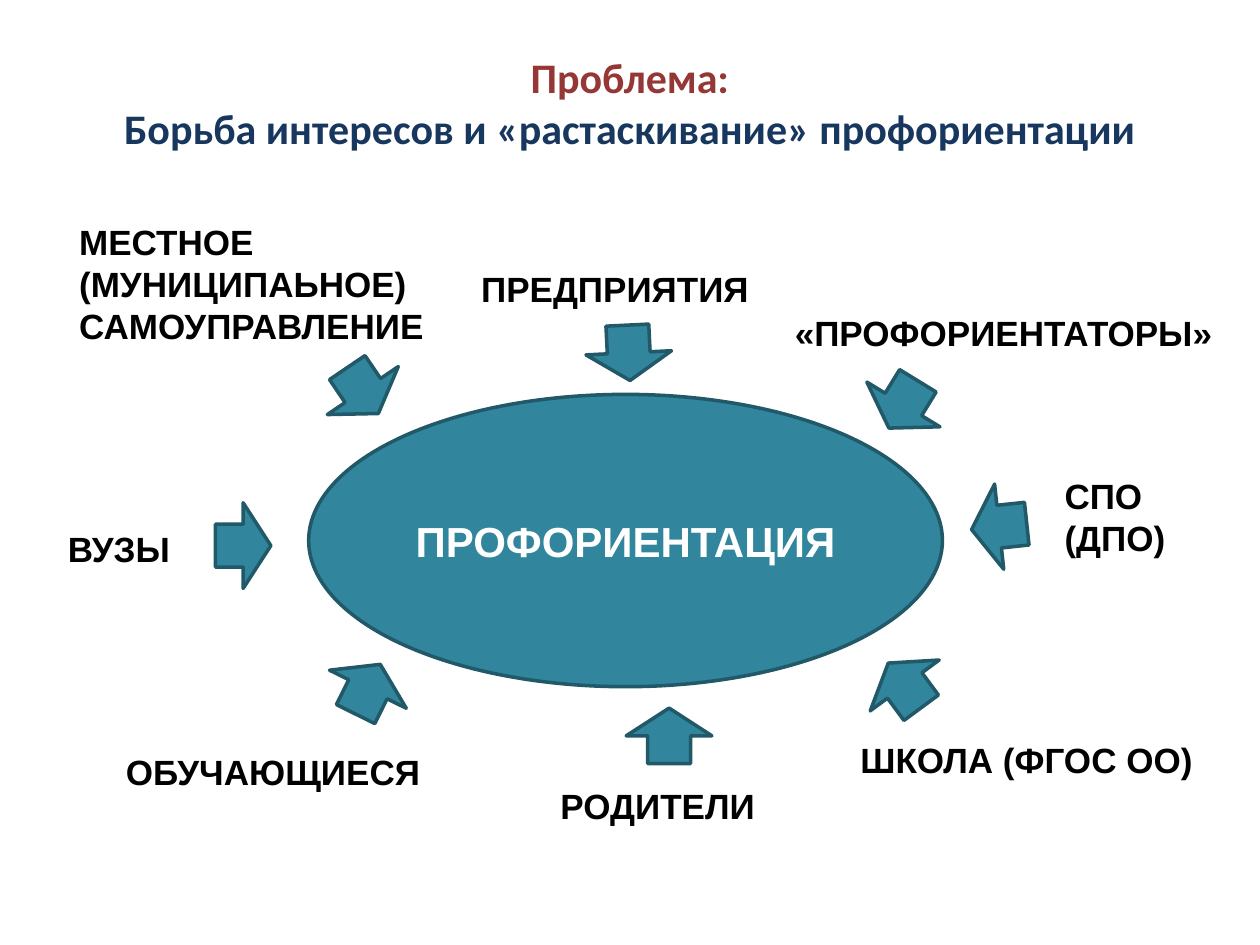
from typing import NamedTuple

from pptx import Presentation
from pptx.dml.color import RGBColor
from pptx.enum.shapes import MSO_SHAPE as Shape
from pptx.enum.text import MSO_ANCHOR as Anchor, PP_ALIGN as Align
from pptx.util import Inches, Pt

COLORS = {
    "problem": "953735",
    "statement": "17375E",
    "fill": "31859C",
    "outline": "215968",
    "label": "000000",
    "center": "FFFFFF",
}
ARROW_WIDTH, ARROW_HEIGHT = 0.68, 0.44


class Box(NamedTuple):
    left: float
    top: float
    width: float
    height: float


class Stakeholder(NamedTuple):
    """A party with its label and the arrow pointing to the centre."""
    name: str
    label: Box
    arrow_left: float
    arrow_top: float
    arrow_rotation: float


STAKEHOLDERS = [
    Stakeholder("МЕСТНОЕ (МУНИЦИПАЬНОЕ) САМОУПРАВЛЕНИЕ",
                Box(0.53, 1.7, 3.06, 1.01), 2.54, 2.88, 325.9),
    Stakeholder("ПРЕДПРИЯТИЯ", Box(3.72, 2.07, 2.34, 0.4), 4.65, 2.58, 357.2),
    Stakeholder("«ПРОФОРИЕНТАТОРЫ»", Box(6.21, 2.42, 3.59, 0.4), 6.83, 2.99, 31.5),
    Stakeholder("СПО\n(ДПО)", Box(8.35, 3.72, 1.15, 0.77), 7.59, 3.96, 83.9),
    Stakeholder("ШКОЛА (ФГОС ОО)", Box(6.73, 5.81, 2.88, 0.44), 6.84, 5.22, 143.6),
    Stakeholder("РОДИТЕЛИ", Box(4.35, 6.18, 1.83, 0.4), 4.97, 5.62, 180),
    Stakeholder("ОБУЧАЮЩИЕСЯ", Box(0.9, 5.91, 2.55, 0.4), 2.58, 5.25, 206.4),
    Stakeholder("ВУЗЫ", Box(0.44, 4.14, 1.51, 0.4), 1.59, 4.11, 270),
]


def style_run(run, size: int, color: str, font: str = "Arial") -> None:
    run.font.name = font
    run.font.size = Pt(size)
    run.font.bold = True
    run.font.color.rgb = RGBColor.from_string(COLORS[color])


def add_text(slide, box: Box, text: str):
    frame = slide.shapes.add_textbox(*map(Inches, box)).text_frame
    frame.word_wrap = True
    frame.text = text
    return frame


def add_title(slide) -> None:
    frame = add_text(slide, Box(0.5, 0.45, 9, 0.72),
                     "Проблема:\vБорьба интересов и «растаскивание» профориентации")
    frame.vertical_anchor = Anchor.MIDDLE
    heading = frame.paragraphs[0]
    heading.alignment = Align.CENTER
    for run, color in zip(heading.runs, ("problem", "statement")):
        style_run(run, 24, color, "Calibri")


def add_teal_shape(slide, kind: Shape, box: Box, rotation: float = 0):
    shape = slide.shapes.add_shape(kind, *map(Inches, box))
    shape.rotation = rotation
    shape.shadow.inherit = False
    shape.fill.solid()
    shape.fill.fore_color.rgb = RGBColor.from_string(COLORS["fill"])
    shape.line.color.rgb = RGBColor.from_string(COLORS["outline"])
    shape.line.width = Pt(2)
    return shape


def add_center(slide) -> None:
    ellipse = add_teal_shape(slide, Shape.OVAL, Box(2.45, 3.13, 5.03, 2.32))
    frame = ellipse.text_frame
    frame.word_wrap = False
    frame.vertical_anchor = Anchor.MIDDLE
    frame.text = "ПРОФОРИЕНТАЦИЯ"
    topic = frame.paragraphs[0]
    topic.alignment = Align.CENTER
    style_run(topic.runs[0], 24, "center")


def add_stakeholder(slide, party: Stakeholder) -> None:
    for line in add_text(slide, party.label, party.name).paragraphs:
        style_run(line.runs[0], 20, "label")
    arrow = Box(party.arrow_left, party.arrow_top, ARROW_WIDTH, ARROW_HEIGHT)
    add_teal_shape(slide, Shape.DOWN_ARROW, arrow, party.arrow_rotation)


def main() -> None:
    deck = Presentation()
    deck.slide_width, deck.slide_height = Inches(10), Inches(7.5)
    slide = deck.slides.add_slide(deck.slide_layouts[6])
    add_title(slide)
    add_center(slide)
    for party in STAKEHOLDERS:
        add_stakeholder(slide, party)
    deck.save("out.pptx")


if __name__ == "__main__":
    main()
